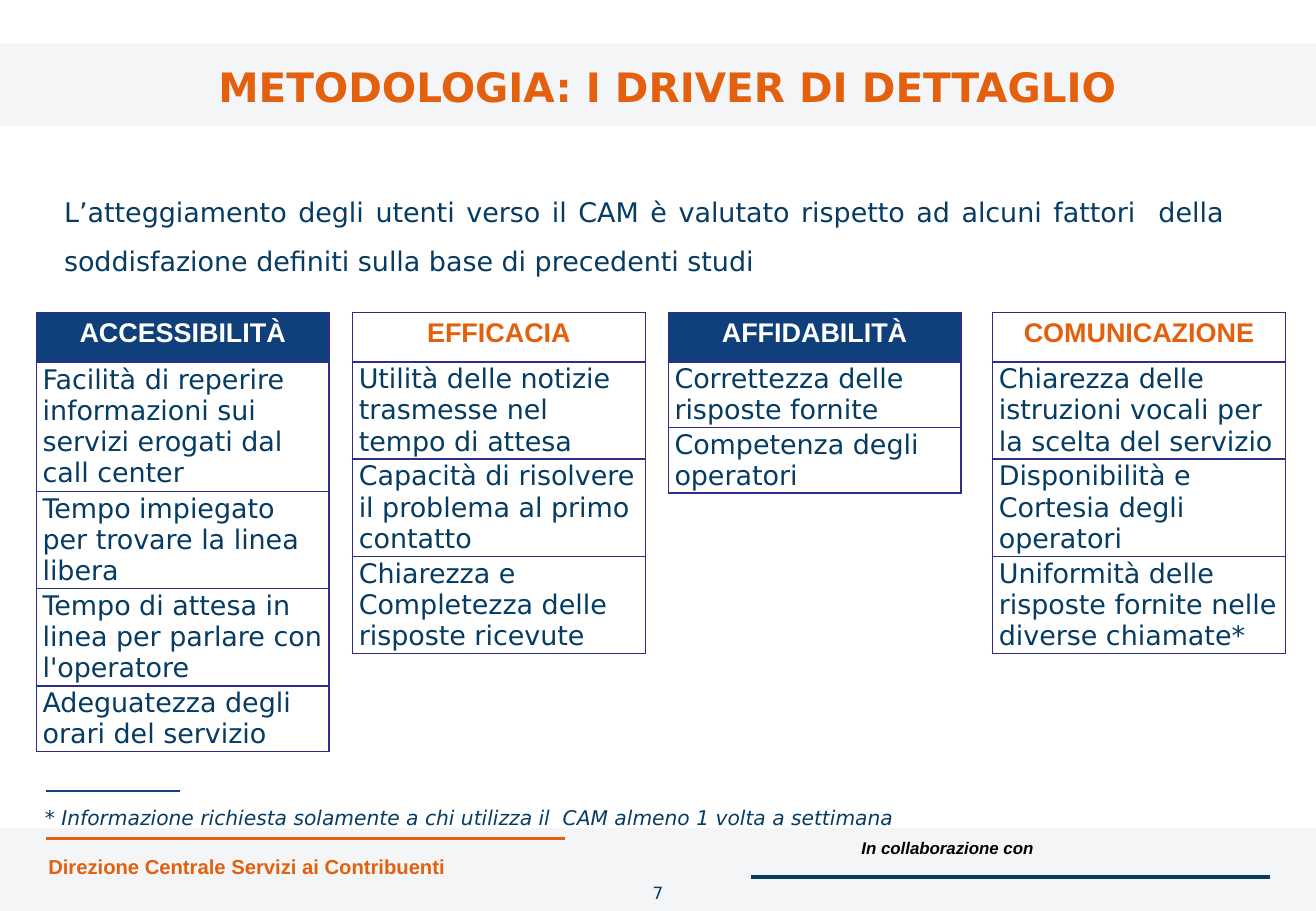
from lxml.etree import SubElement
from pptx import Presentation
from pptx.dml.color import RGBColor
from pptx.enum.shapes import MSO_CONNECTOR, MSO_SHAPE
from pptx.enum.text import MSO_ANCHOR, PP_ALIGN
from pptx.oxml.ns import qn
from pptx.util import Cm, Pt

HUES = {
    "orange": "E3600F", "navy": "073C62", "blue": "0F407B", "edge": "2D2D8A",
    "band": "F3F5F7", "white": "FFFFFF", "black": "000000",
}
SANS, ARIAL = "DejaVu Sans", "Arial"


def hue(name):
    return RGBColor.from_string(HUES[name])


def write(frame, text, size, face, color, align=PP_ALIGN.LEFT, bold=False, slant=False):
    """Add one run to the first paragraph of a text frame and return the paragraph."""
    frame.word_wrap = True
    par = frame.paragraphs[0]
    par.alignment = align
    run = par.add_run()
    run.text = text
    font = run.font
    font.size, font.name, font.bold, font.italic = Pt(size), face, bold, slant
    font.color.rgb = hue(color)
    return par


deck = Presentation()
deck.slide_width, deck.slide_height = Cm(27.51), Cm(19.05)
slide = deck.slides.add_slide(deck.slide_layouts[6])
shapes = slide.shapes

# Bands behind the title and the footer
for top in (0.91, 17.32):
    band = shapes.add_shape(MSO_SHAPE.RECTANGLE, 0, Cm(top), deck.slide_width, Cm(1.73))
    band.shadow.inherit = False
    band.fill.solid()
    band.fill.fore_color.rgb = hue("band")
    band.line.fill.background()

# Footer rules and the short rule above the footnote
for left, right, y, color, width in (
    (0.97, 11.81, 17.53, "orange", 2),
    (15.7, 26.54, 18.34, "navy", 2),
    (0.97, 3.76, 16.54, "blue", 0.75),
):
    rule = shapes.add_connector(MSO_CONNECTOR.STRAIGHT, Cm(left), Cm(y), Cm(right), Cm(y))
    rule.line.color.rgb = hue(color)
    rule.line.width = Pt(width)
    SubElement(rule._element.spPr, qn("a:effectLst"))

# Title, introduction, footnote and footer
for box, text, size, face, color, align, bold, slant, space in (
    ((0.97, 0.91, 25.96, 1.8), "METODOLOGIA: I DRIVER DI DETTAGLIO",
     24, SANS, "orange", PP_ALIGN.CENTER, True, False, 1),
    ((1.09, 3.63, 24.77, 12.9),
     "L’atteggiamento degli utenti verso il CAM è valutato rispetto ad alcuni fattori  della "
     "soddisfazione definiti sulla base di precedenti studi",
     16, SANS, "navy", PP_ALIGN.JUSTIFY, False, False, 1.5),
    ((0.69, 16.72, 22.89, 0.74),
     "* Informazione richiesta solamente a chi utilizza il  CAM almeno 1 volta a settimana",
     12, SANS, "navy", PP_ALIGN.LEFT, False, True, 1),
    ((0.76, 17.73, 10.39, 0.76), "Direzione Centrale Servizi ai Contribuenti",
     12, ARIAL, "orange", PP_ALIGN.LEFT, True, False, 1),
    ((16.64, 17.4, 5.21, 0.66), "In collaborazione con",
     10, ARIAL, "black", PP_ALIGN.RIGHT, True, True, 1),
    ((12.55, 18.34, 2.41, 0.99), "7",
     10, SANS, "navy", PP_ALIGN.CENTER, False, False, 1),
):
    frame = shapes.add_textbox(*map(Cm, box)).text_frame
    par = write(frame, text, size, face, color, align, bold, slant)
    par.line_spacing = float(space)
    if size == 24:
        frame.vertical_anchor = MSO_ANCHOR.MIDDLE

# One table for each driver
HEAD, ROW, WIDE = 1.04, 1.37, 6.12
for left, ink, back, head, items in (
    (0.76, "white", "blue", "ACCESSIBILITÀ", (
        "Facilità di reperire informazioni sui servizi erogati dal call center",
        "Tempo impiegato per trovare la linea libera",
        "Tempo di attesa in linea per parlare con l'operatore",
        "Adeguatezza degli orari del servizio")),
    (7.37, "orange", "white", "EFFICACIA", (
        "Utilità delle notizie trasmesse nel tempo di attesa",
        "Capacità di risolvere il problema al primo contatto",
        "Chiarezza e Completezza delle risposte ricevute")),
    (13.97, "white", "blue", "AFFIDABILITÀ", (
        "Correttezza delle risposte fornite",
        "Competenza degli operatori")),
    (20.75, "orange", "white", "COMUNICAZIONE", (
        "Chiarezza delle istruzioni vocali per la scelta del servizio",
        "Disponibilità e Cortesia degli operatori",
        "Uniformità delle risposte fornite nelle diverse chiamate*")),
):
    count = len(items)
    table = shapes.add_table(count + 1, 1, Cm(left), Cm(6.53), Cm(WIDE),
                             Cm(HEAD + count * ROW)).table
    table.first_row = table.horz_banding = False
    for index, text in enumerate((head, *items)):
        table.rows[index].height = Cm(ROW if index else HEAD)
        cell = table.cell(index, 0)
        props = cell._tc.get_or_add_tcPr()
        for side in ("lnL", "lnR", "lnT", "lnB"):
            edge = SubElement(props, qn("a:" + side), w=str(Pt(1)))
            SubElement(SubElement(edge, qn("a:solidFill")), qn("a:srgbClr"), val=HUES["edge"])
        cell.fill.solid()
        cell.fill.fore_color.rgb = hue("white" if index else back)
        if index:
            cell.vertical_anchor = MSO_ANCHOR.MIDDLE
            cell.margin_left = cell.margin_right = Cm(0.13)
            cell.margin_top = cell.margin_bottom = 0
            write(cell.text_frame, text, 16, SANS, "navy")
        else:
            write(cell.text_frame, text, 16, ARIAL, ink, PP_ALIGN.CENTER, True)

deck.save("out.pptx")
